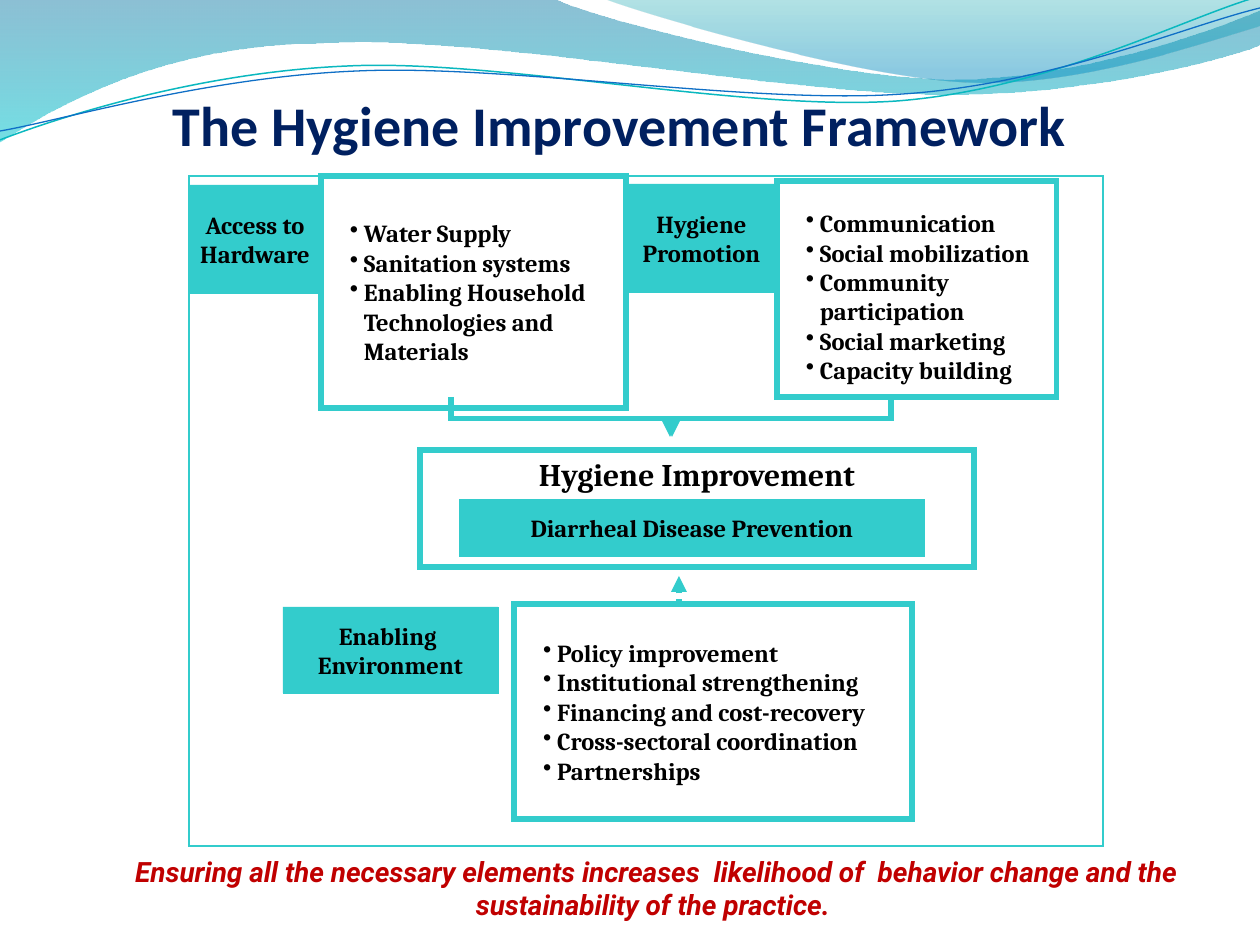
from dataclasses import dataclass
from math import cos, radians, sin

from lxml import etree
from pptx import Presentation
from pptx.dml.color import RGBColor
from pptx.enum.dml import MSO_LINE
from pptx.enum.shapes import MSO_CONNECTOR, MSO_SHAPE
from pptx.enum.text import MSO_ANCHOR, PP_ALIGN
from pptx.oxml.ns import qn
from pptx.util import Emu, Pt

SCALE = 914400 / 126
RECT = MSO_SHAPE.RECTANGLE
BENT, STRAIGHT = MSO_CONNECTOR.ELBOW, MSO_CONNECTOR.STRAIGHT
DOT = MSO_LINE.ROUND_DOT
TOP, MID, LOW = MSO_ANCHOR.TOP, MSO_ANCHOR.MIDDLE, MSO_ANCHOR.BOTTOM
LEFT, CENTER = PP_ALIGN.LEFT, PP_ALIGN.CENTER
TILT = 2.7


@dataclass(frozen=True)
class Theme:
    teal: str = "33CCCC"
    ink: str = "000000"
    navy: str = "002060"
    red: str = "C00000"
    aqua: str = "0AB8BF"
    blue: str = "0F6FC6"
    head: int = 32
    lead: int = 18
    body: int = 14
    note: int = 16
    thick: float = 3
    thin: float = 0.75
    hair: float = 0.25


T = Theme()
BODY = {"name": "Cambria", "size": T.body, "bold": True, "color": T.ink}
LEAD = {**BODY, "size": T.lead}
HEAD = {"name": "Calibri", "size": T.head, "bold": True, "color": T.navy}
NOTE = {"name": "Roboto", "size": T.note, "bold": True, "italic": True,
        "color": T.red}

# A band or line is a start point, then steps: one point is a straight
# segment, three points are a Bezier segment. Stops: place, colour, opacity.
BANDS = [
    ((0, -1), [
        [(554, -1)],
        [(600, 21), (837, 79), (955, 79)],
        [(1075, 79), (1207, 33), (1260, 11)],
        [(1261, 45)],
        [(1238, 55), (1096, 96), (940, 94)],
        [(784, 94), (481, 35), (324, 43)],
        [(163, 44), (58, 105), (-1, 142)]],
     [(0, "0074A1", 45), (1, "00C6CF", 55)]),
    ((604, -1), [
        [(641, 14), (859, 78), (969, 82)],
        [(1079, 87), (1211, 40), (1260, 26)],
        [(1260, 0)]],
     [(0, "00A1A9", 30), (0.8, "008BBF", 45)]),
]
# Lines also give the centre they are tilted about.
LINES = [
    ((0, 140), [
        [(60, 117), (199, 72), (349, 66)],
        [(498, 59), (747, 112), (898, 101)],
        [(1050, 89), (1182, 19), (1257, -3)]], (629, 72), T.aqua, 0.85),
    ((0, 131), [
        [(59, 121), (207, 77), (357, 71)],
        [(508, 64), (752, 105), (903, 94)],
        [(1053, 84), (1185, 26), (1260, 8)]], (629, 74), T.blue, T.thin),
]
LISTS = [
    ((777, 181, 280, 216), 20, ["Communication", "Social mobilization",
                                "Community participation",
                                "Social marketing", "Capacity building"]),
    ((321, 176, 305, 232), 5, ["Water Supply", "Sanitation systems",
                               "Enabling Household Technologies and Materials"]),
    ((514, 604, 398, 215), 5, ["Policy improvement",
                               "Institutional strengthening",
                               "Financing and cost-recovery",
                               "Cross-sectoral coordination", "Partnerships"]),
]
LABELS = [
    ((626, 184, 151, 108), ["Hygiene", "Promotion"]),
    ((189, 185, 132, 108), ["Access to Hardware"]),
    ((283, 607, 215, 86), ["Enabling ", "Environment"]),
]


def px(n):
    return Emu(round(n * SCALE))


def rgb(code):
    return RGBColor.from_string(code)


def assign(item, values):
    for key, value in values.items():
        setattr(item, key, value)


def style(font, look):
    for key, value in look.items():
        if key == "color":
            font.color.rgb = rgb(value)
        else:
            setattr(font, key, Pt(value) if key == "size" else value)


def stroke(line, color, width):
    line.color.rgb = rgb(color)
    line.width = Pt(width)
    etree.SubElement(line._get_or_add_ln(), qn("a:miter"), lim="800000")


def write(shape, rows, look, align=CENTER, anchor=MID, inset=(11, 5, 11, 5)):
    """Fill the frame with one paragraph a row; inset is left, top, right, bottom."""
    frame = shape.text_frame
    sides = ("margin_left", "margin_top", "margin_right", "margin_bottom")
    assign(frame, {"word_wrap": True, "vertical_anchor": anchor,
                   **dict(zip(sides, map(px, inset)))})
    for i, row in enumerate(rows):
        para = frame.add_paragraph() if i else frame.paragraphs[0]
        para.alignment = align
        run = para.add_run()
        run.text = row
        style(run.font, look)
    return frame


def box(slide, area, width=T.thick, fill=None):
    shape = slide.shapes.add_shape(RECT, *map(px, area))
    shape.shadow.inherit = False
    if fill:
        shape.fill.solid()
        shape.fill.fore_color.rgb = rgb(fill)
    else:
        shape.fill.background()
    stroke(shape.line, T.teal, width)
    return shape


def bullets(slide, area, top, rows):
    frame = write(box(slide, area), rows, BODY, LEFT, inset=(11, top, 11, 5))
    for para in frame.paragraphs:
        props = para._p.get_or_add_pPr()
        props.set("marL", str(px(32)))
        props.set("indent", str(px(-14)))
        etree.SubElement(props, qn("a:buFontTx"))
        etree.SubElement(props, qn("a:buChar"), char="•")


def trace(slide, start, steps, close):
    """Build an outline, then join each three-point step into a Bezier segment."""
    pen = slide.shapes.build_freeform(*map(px, start))
    pen.add_line_segments([(px(x), px(y)) for step in steps for x, y in step],
                          close=close)
    shape = pen.convert_to_shape()
    shape.shadow.inherit = False
    legs = iter(list(shape._element.iter(qn("a:lnTo"))))
    for step in steps:
        group = [next(legs) for _ in step]
        if len(group) == 3:
            bend = etree.Element(qn("a:cubicBezTo"))
            group[0].addprevious(bend)
            for leg in group:
                bend.append(leg[0])
                leg.getparent().remove(leg)
    return shape


def band(slide, start, steps, stops):
    shape = trace(slide, start, steps, True)
    shape.line.fill.background()
    shape.fill.gradient()
    shape.fill.gradient_angle = 270
    for stop, (place, color, _) in zip(shape.fill.gradient_stops, stops):
        stop.position = place
        stop.color.rgb = rgb(color)
    tints = shape._element.spPr.iter(qn("a:srgbClr"))
    for tint, (_, _, alpha) in zip(tints, stops):
        etree.SubElement(tint, qn("a:alpha"), val=str(alpha * 1000))


def curve(slide, start, steps, hub, color, width):
    """Draw an open line, level in its own frame and tilted as a shape."""
    c, s = cos(radians(TILT)), sin(radians(TILT))

    def level(spot):
        dx, dy = spot[0] - hub[0], spot[1] - hub[1]
        return hub[0] + c * dx - s * dy, hub[1] + s * dx + c * dy

    flat = [[level(spot) for spot in step] for step in steps]
    shape = trace(slide, level(start), flat, False)
    shape.rotation = 360 - TILT
    shape.fill.background()
    stroke(shape.line, color, width)


def arrow(slide, kind, ends, dash=None):
    link = slide.shapes.add_connector(kind, *map(px, ends))
    link.line.dash_style = dash
    stroke(link.line, T.teal, T.thick)
    etree.SubElement(link.line._get_or_add_ln(), qn("a:tailEnd"), type="triangle")
    etree.SubElement(link._element.spPr, qn("a:effectLst"))
    return link


def drop(slide, x1, y1, x2, y2):
    """Add a bent arrow that leaves and arrives downwards."""
    mx, my = (x1 + x2) / 2, (y1 + y2) / 2
    dx, dy = abs(x2 - x1) / 2, (y2 - y1) / 2
    side, turn = (1, 90) if x2 < x1 else (-1, 270)
    link = arrow(slide, BENT, (mx - side * dy, my - dx, mx + side * dy, my + dx))
    props = link._element.spPr
    props.find(qn("a:xfrm")).set("rot", str(turn * 60000))
    guides = props.find(qn("a:prstGeom")).find(qn("a:avLst"))
    etree.SubElement(guides, qn("a:gd"), name="adj1", fmla="val 54000")


def main():
    deck = Presentation()
    assign(deck, {"slide_width": px(1260), "slide_height": px(945)})
    slide = deck.slides.add_slide(deck.slide_layouts[5])
    for item in BANDS:
        band(slide, *item)
    for item in LINES:
        curve(slide, *item)

    title = slide.shapes.title
    assign(title, dict(zip(("left", "top", "width", "height"),
                           map(px, (84, 74, 1090, 84)))))
    write(title, ["The Hygiene Improvement Framework"], HEAD, LEFT, LOW,
          (89, 6, 0, 0))

    box(slide, (189, 176, 914, 670), T.thin)
    for x, tip in ((891, 672), (451, 670)):
        drop(slide, x, 397, tip, 437)
    arrow(slide, STRAIGHT, (679, 604, 679, 576), DOT)
    for item in LISTS:
        bullets(slide, *item)
    for area, rows in LABELS:
        write(box(slide, area, T.hair, T.teal), rows, BODY, inset=(4, 6, 4, 6))
    write(box(slide, (420, 450, 554, 117)), ["Hygiene Improvement"], LEAD,
          anchor=TOP)
    write(box(slide, (462, 502, 460, 52), fill=T.teal),
          ["Diarrheal Disease Prevention"], BODY)

    note = slide.shapes.add_textbox(*map(px, (116, 848, 1081, 81)))
    write(note, ["Ensuring all the necessary elements increases  likelihood of  "
                 "behavior change and the sustainability of the practice. "],
          NOTE, anchor=TOP, inset=(13, 6, 13, 6))
    deck.save("out.pptx")


if __name__ == "__main__":
    main()
